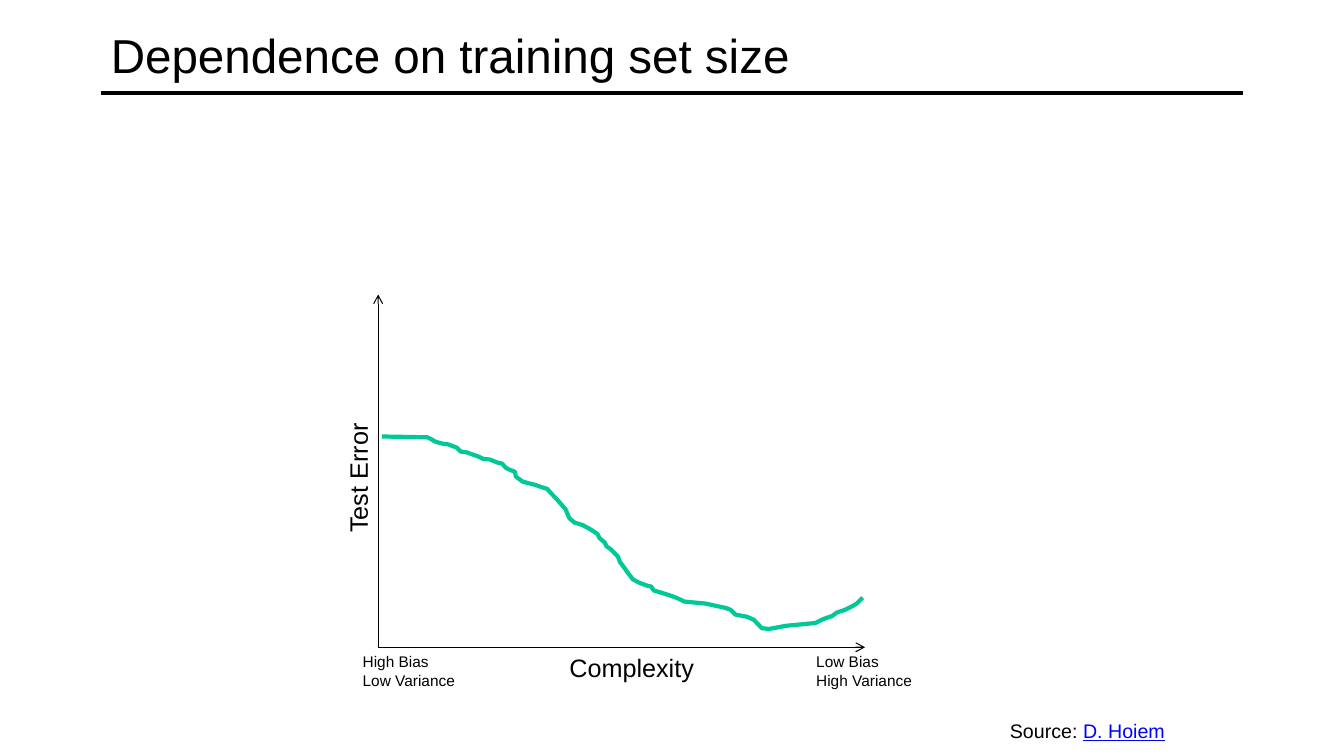
from lxml.etree import SubElement
from pptx import Presentation
from pptx.dml.color import RGBColor
from pptx.enum.shapes import MSO_CONNECTOR
from pptx.enum.text import MSO_ANCHOR, MSO_AUTO_SIZE, PP_ALIGN
from pptx.oxml.ns import qn
from pptx.util import Cm, Pt

BLACK = RGBColor(0x00, 0x00, 0x00)
GREEN = RGBColor(0x00, 0xC8, 0x96)
LINK_BLUE = RGBColor(0x00, 0x00, 0xFF)

AXIS_LEFT, AXIS_RIGHT = 9.53, 21.8
AXIS_TOP, AXIS_BOTTOM = 7.42, 16.31

# Test error curve, in hundredths of a centimetre
ERROR_CURVE = [
    (963, 1100), (1077, 1102), (1087, 1107), (1097, 1113), (1115, 1118),
    (1130, 1120), (1151, 1128), (1161, 1138), (1176, 1140), (1207, 1151),
    (1217, 1156), (1234, 1158), (1255, 1166), (1265, 1168), (1275, 1179),
    (1285, 1184), (1298, 1189), (1300, 1201), (1308, 1207), (1318, 1214),
    (1349, 1222), (1369, 1229), (1379, 1232), (1388, 1242), (1405, 1260),
    (1425, 1283), (1435, 1306), (1448, 1317), (1468, 1323), (1488, 1334),
    (1496, 1339), (1506, 1346), (1511, 1356), (1524, 1367), (1529, 1377),
    (1539, 1384), (1557, 1402), (1563, 1417), (1575, 1433), (1582, 1443),
    (1595, 1460), (1610, 1468), (1631, 1476), (1641, 1478), (1648, 1488),
    (1684, 1499), (1704, 1506), (1725, 1516), (1778, 1521), (1829, 1532),
    (1842, 1537), (1854, 1549), (1882, 1554), (1900, 1562), (1920, 1583),
    (1938, 1585), (1981, 1577), (2055, 1570), (2075, 1560), (2098, 1552),
    (2108, 1544), (2129, 1537), (2149, 1527), (2159, 1521), (2174, 1506),
]

# Text, left, top, width, height, size, rotation
LABELS = [
    ("Complexity", 14.1, AXIS_BOTTOM, 3.68, 1.02, 18, 0),
    ("Low Bias\nHigh Variance", 20.32, AXIS_BOTTOM, 2.97, 1.19, 11, 0),
    ("High Bias\nLow Variance", 8.89, AXIS_BOTTOM, 2.9, 1.19, 11, 0),
    ("Test Error", 7.37, 11.51, 3.3, 1.02, 18, 270),
]


def apply_format(target, values):
    for attribute, value in values.items():
        setattr(target, attribute, value)


def format_font(font, size, color=BLACK, **extra):
    apply_format(font, {"name": "Arial", "size": Pt(size), **extra})
    font.color.rgb = color


def add_title(slide, text):
    title = slide.shapes.title
    apply_format(title, {"left": Cm(2.54), "top": Cm(0.2),
                         "width": Cm(28.78), "height": Cm(2.34)})
    frame = title.text_frame
    apply_format(frame, {"text": text, "vertical_anchor": MSO_ANCHOR.MIDDLE,
                         "auto_size": MSO_AUTO_SIZE.NONE})
    heading = frame.paragraphs[0]
    heading.alignment = PP_ALIGN.LEFT
    format_font(heading.font, 34)


def add_line(slide, start, end, width, arrow=False):
    line = slide.shapes.add_connector(
        MSO_CONNECTOR.STRAIGHT, *(Cm(value) for value in start + end))
    line.line.color.rgb = BLACK
    line.line.width = Pt(width)
    if arrow:
        SubElement(line.line._get_or_add_ln(), qn("a:tailEnd"), type="arrow")
    SubElement(line._element.spPr, qn("a:effectLst"))


def add_curve(slide, points):
    builder = slide.shapes.build_freeform(*points[0], scale=Cm(0.01))
    builder.add_line_segments(points[1:], close=False)
    curve = builder.convert_to_shape()
    curve.shadow.inherit = False
    curve.fill.background()
    curve.line.color.rgb = GREEN
    curve.line.width = Pt(3)
    SubElement(curve.line._get_or_add_ln(), qn("a:round"))


def add_label(slide, text, left, top, width, height, size, rotation=0):
    label = slide.shapes.add_textbox(Cm(left), Cm(top), Cm(width), Cm(height))
    label.rotation = rotation
    frame = label.text_frame
    apply_format(frame, {"text": text, "word_wrap": False,
                         "auto_size": MSO_AUTO_SIZE.SHAPE_TO_FIT_TEXT})
    for paragraph in frame.paragraphs:
        format_font(paragraph.font, size)
    return frame


def main():
    deck = Presentation()
    deck.slide_width, deck.slide_height = Cm(33.87), Cm(19.05)
    slide = deck.slides.add_slide(deck.slide_layouts[5])

    add_line(slide, (2.54, 2.34), (31.32, 2.34), 3)
    add_title(slide, "Dependence on training set size")
    add_curve(slide, ERROR_CURVE)

    origin = (AXIS_LEFT, AXIS_BOTTOM)
    for axis_end in ((AXIS_LEFT, AXIS_TOP), (AXIS_RIGHT, AXIS_BOTTOM)):
        add_line(slide, origin, axis_end, 0.75, arrow=True)
    for label in LABELS:
        add_label(slide, *label)

    source = add_label(slide, "Source: ", 25.2, 17.98, 4.45, 0.86, 14)
    author = source.paragraphs[0].add_run()
    author.text = "D. Hoiem"
    format_font(author.font, 14, LINK_BLUE, underline=True)

    deck.save("out.pptx")


if __name__ == "__main__":
    main()
